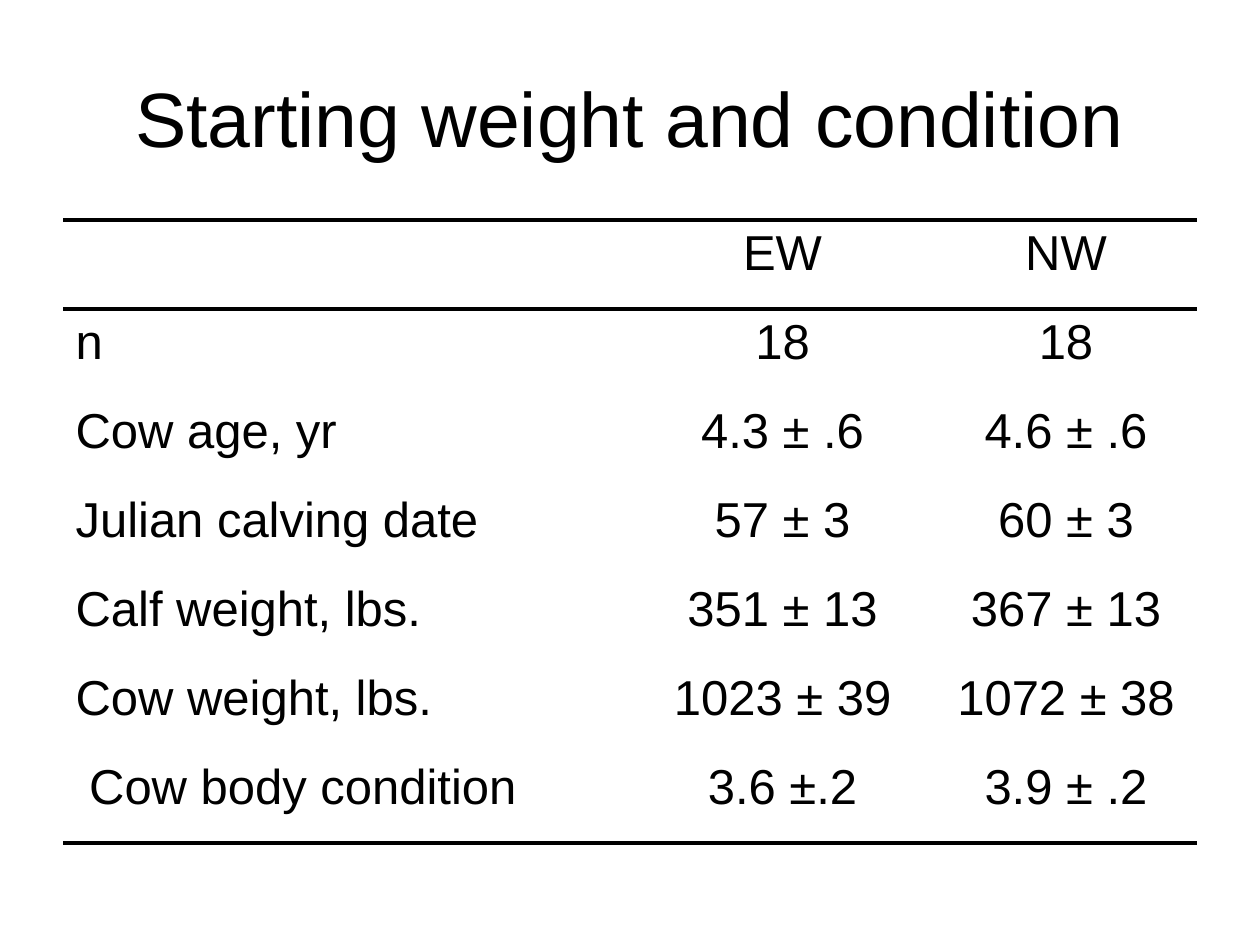
from lxml import etree
from pptx import Presentation
from pptx import util as u
from pptx.dml.color import RGBColor
from pptx.enum import text
from pptx.oxml.ns import qn

PX = u.Inches(1) / 126
BLACK = RGBColor(0, 0, 0)
FONT = "Arial"
COLUMNS = (567, 305, 262)
ROW_HEIGHT = 89
ROWS = (
    ("", "EW", "NW"),
    ("n", "18", "18"),
    ("Cow age, yr", "4.3 ± .6", "4.6 ± .6"),
    ("Julian calving date", "57 ± 3", "60 ± 3"),
    ("Calf weight, lbs.", "351 ± 13", "367 ± 13"),
    ("Cow weight, lbs.", "1023 ± 39", "1072 ± 38"),
    (" Cow body condition", "3.6 ±.2", "3.9 ± .2"),
)


def px(*lengths):
    """Turn pixel lengths into EMU."""
    return [u.Emu(round(n * PX)) for n in lengths]


def write(tf, words, size, align=text.PP_ALIGN.LEFT, before=0):
    """Write one paragraph, with space before as a percentage of a line."""
    p = tf.paragraphs[0]
    p.alignment = align
    if before:
        gap = etree.SubElement(p._p.get_or_add_pPr(), qn("a:spcBef"))
        etree.SubElement(gap, qn("a:spcPct"), val=str(before * 1000))
    r = p.add_run()
    r.text = words
    r.font.name, r.font.size = FONT, u.Pt(size)
    r.font.color.rgb = BLACK


def add_title(s, words, box):
    """Add the centred slide title."""
    tf = s.shapes.add_textbox(*px(*box)).text_frame
    tf.word_wrap = True
    tf.vertical_anchor = text.MSO_ANCHOR.MIDDLE
    write(tf, words, 44, align=text.PP_ALIGN.CENTER)


def set_borders(cell, ruled, width=3):
    """Draw black lines on the ruled edges and none on the others."""
    tc_pr = cell._tc.get_or_add_tcPr()
    for edge in "LRTB":
        ln = etree.SubElement(tc_pr, qn(f"a:ln{edge}"), w=str(u.Pt(width)))
        if edge in ruled:
            fill = etree.SubElement(ln, qn("a:solidFill"))
            etree.SubElement(fill, qn("a:srgbClr"), val=str(BLACK))
        else:
            etree.SubElement(ln, qn("a:noFill"))


def add_weight_table(s, left, top):
    """Add the table, ruled around its header and below its last row."""
    box = px(left, top, sum(COLUMNS), ROW_HEIGHT * len(ROWS))
    table = s.shapes.add_table(len(ROWS), len(COLUMNS), *box).table
    table.first_row = table.horz_banding = False
    for column, width in zip(table.columns, px(*COLUMNS)):
        column.width = width
    edges = {0: "TB", 1: "T", len(ROWS) - 1: "B"}
    for i, values in enumerate(ROWS):
        table.rows[i].height = px(ROW_HEIGHT)[0]
        for j, value in enumerate(values):
            cell = table.cell(i, j)
            set_borders(cell, edges.get(i, ""))
            cell.fill.background()
            if value:
                align = text.PP_ALIGN.CENTER if j else text.PP_ALIGN.LEFT
                write(cell.text_frame, value, 28, align=align, before=20)


def main():
    """Build and save the slide."""
    prs = Presentation()
    prs.slide_width, prs.slide_height = px(1260, 945)
    s = prs.slides.add_slide(prs.slide_layouts[6])
    add_title(s, "Starting weight and condition", (63, 38, 1134, 158))
    add_weight_table(s, 63, 220)
    prs.save("out.pptx")


if __name__ == "__main__":
    main()
